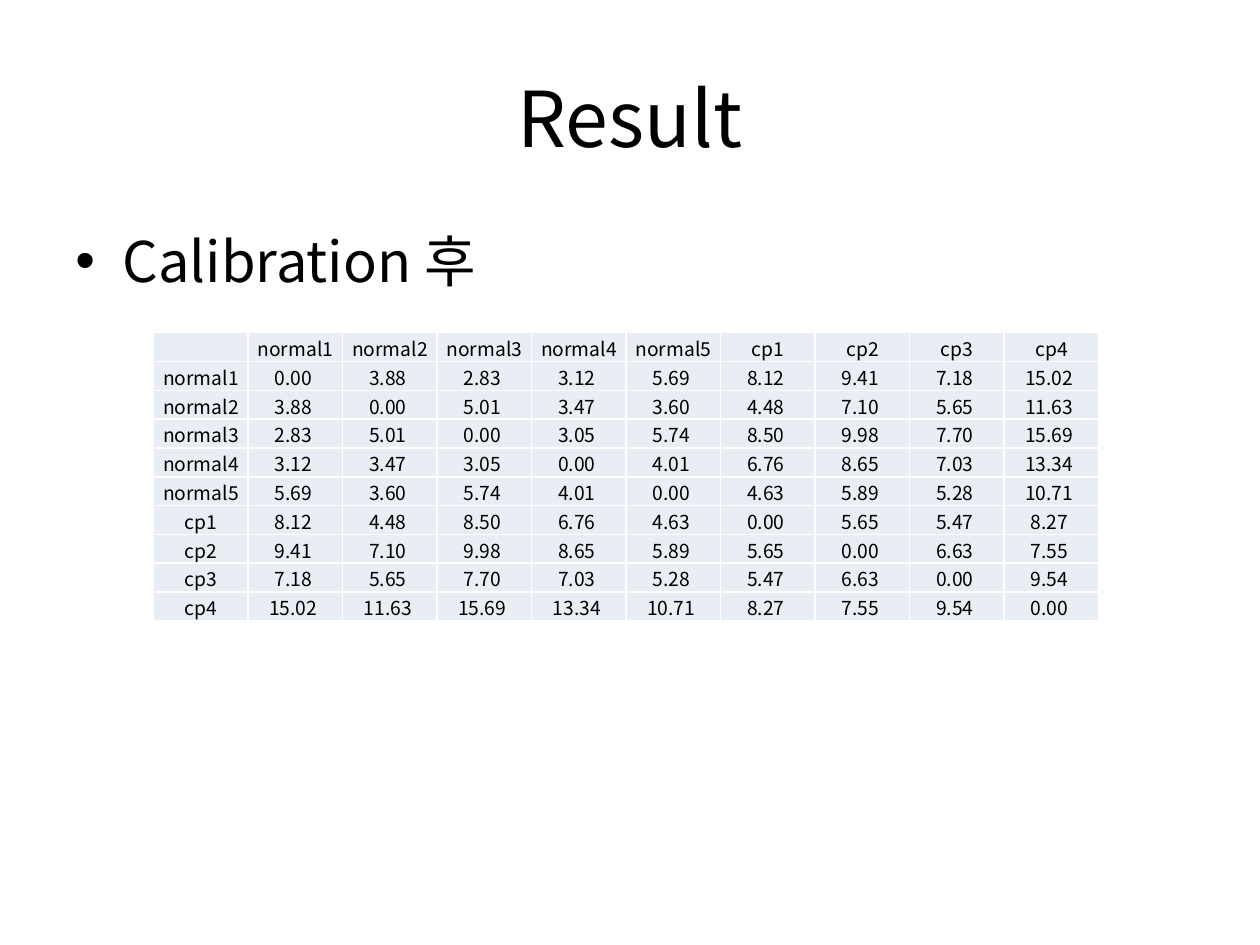
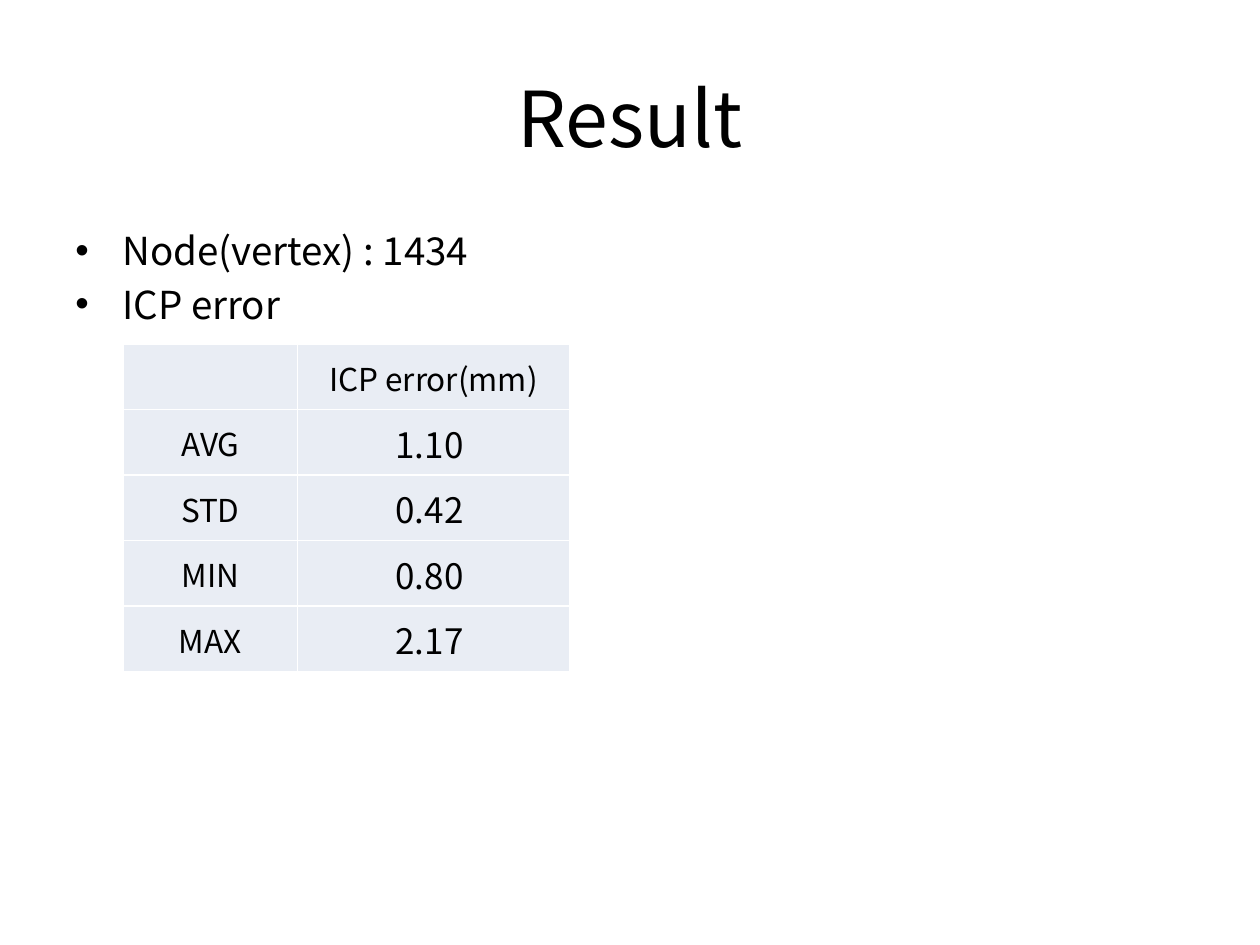
import dataclasses

import pptx
import pptx.dml.color
import pptx.enum.text
import pptx.oxml
import pptx.oxml.ns
import pptx.util

COLORS = {"text": "000000", "cell": "E9EDF4", "border": "FFFFFF"}
FONT = "Noto Sans CJK KR"
SLIDE_W, SLIDE_H = pptx.util.Inches(10), pptx.util.Inches(7.5)
COLUMN, ROW = SLIDE_W / 100, SLIDE_H / 100  # layout grid of 100 x 100
ALIGN = pptx.enum.text.PP_ALIGN
ANCHOR = pptx.enum.text.MSO_ANCHOR

SUBJECTS = [f"normal{n}" for n in range(1, 6)] + [f"cp{n}" for n in range(1, 5)]
# Distances from each subject to the ones after it; the matrix is symmetric
DISTANCES = [
    [3.88, 2.83, 3.12, 5.69, 8.12, 9.41, 7.18, 15.02],
    [5.01, 3.47, 3.60, 4.48, 7.10, 5.65, 11.63],
    [3.05, 5.74, 8.50, 9.98, 7.70, 15.69],
    [4.01, 6.76, 8.65, 7.03, 13.34],
    [4.63, 5.89, 5.28, 10.71],
    [5.65, 5.47, 8.27],
    [6.63, 7.55],
    [9.54],
]
ICP_ERRORS = {"AVG": 1.10, "STD": 0.42, "MIN": 0.80, "MAX": 2.17}


@dataclasses.dataclass
class Box:
    """A region in grid columns and rows."""
    left: float
    top: float
    width: float
    height: float

    def emu(self):
        return (round(self.left * COLUMN), round(self.top * ROW),
                round(self.width * COLUMN), round(self.height * ROW))


TITLE_BOX = Box(5, 4, 90, 16.67)
BODY_BOX = Box(5, 23.33, 90, 66)


def xml(tag, inner="", attributes=""):
    namespace = pptx.oxml.ns.nsdecls("a")
    return pptx.oxml.parse_xml(f"<a:{tag} {namespace} {attributes}>{inner}</a:{tag}>")


def style(paragraph, size, align):
    paragraph.alignment = align
    font = paragraph.font
    font.name, font.size = FONT, pptx.util.Pt(size)
    font.color.rgb = pptx.dml.color.RGBColor.from_string(COLORS["text"])
    defaults = paragraph._p.pPr.find(pptx.oxml.ns.qn("a:defRPr"))
    defaults.append(xml("ea", attributes=f'typeface="{FONT}"'))
    if not paragraph.runs:  # keeps an empty line as low as its neighbours
        paragraph._p.append(xml("endParaRPr", attributes=f'sz="{size * 100}"'))
    return defaults


def add_text_frame(slide, box):
    frame = slide.shapes.add_textbox(*box.emu()).text_frame
    frame.word_wrap = True
    return frame


# Title band
def add_title(slide, box, title):
    frame = add_text_frame(slide, box)
    frame.vertical_anchor = ANCHOR.MIDDLE
    frame.text = title
    style(frame.paragraphs[0], 44, ALIGN.CENTER)


# Bulleted body
def add_bullets(slide, box, points, size):
    frame = add_text_frame(slide, box)
    frame.text = "\n".join(points)
    indent = round(3.75 * COLUMN)
    for point in frame.paragraphs:
        defaults = style(point, size, ALIGN.LEFT)
        point.space_before = pptx.util.Pt(0.2 * size)
        properties = point._p.pPr
        properties.set("marL", str(indent))
        properties.set("indent", str(-indent))
        defaults.addprevious(xml("buFont", attributes='typeface="Arial"'))
        defaults.addprevious(xml("buChar", attributes='char="•"'))


# Table cells
def fill_cell(cell, value, label_size, value_size):
    is_label = isinstance(value, str)
    cell.text = value if is_label else f"{value:.2f} "
    style(cell.text_frame.paragraphs[0], label_size if is_label else value_size,
          ALIGN.CENTER)
    cell.vertical_anchor = ANCHOR.MIDDLE
    cell.margin_left = cell.margin_right = cell.margin_top = pptx.util.Inches(0.01)
    cell.margin_bottom = 0
    cell.fill.solid()
    cell.fill.fore_color.rgb = pptx.dml.color.RGBColor.from_string(COLORS["cell"])
    line = f'<a:solidFill><a:srgbClr val="{COLORS["border"]}"/></a:solidFill>'
    for position, edge in enumerate(("lnL", "lnR", "lnT", "lnB")):
        cell._tc.tcPr.insert(position, xml(edge, line, 'w="12700"'))


def add_grid(slide, box, rows, column_shares, label_size, value_size):
    left, top, width, height = box.emu()
    table = slide.shapes.add_table(
        len(rows), len(column_shares), left, top, width, height).table
    table.first_row = table.horz_banding = False
    for column, share in zip(table.columns, column_shares):
        column.width = round(width * share)
    for row, values in zip(table.rows, rows):
        row.height = round(height / len(rows))
        for cell, value in zip(row.cells, values):
            fill_cell(cell, value, label_size, value_size)


def distance(first, second):
    low, high = sorted((first, second))
    return 0.0 if low == high else DISTANCES[low][high - low - 1]


def add_result_slide(deck, points, point_size):
    slide = deck.slides.add_slide(deck.slide_layouts[6])
    add_title(slide, TITLE_BOX, "Result")
    add_bullets(slide, BODY_BOX, points, point_size)
    return slide


# Slide 1: distances between subjects
def add_calibration_slide(deck):
    slide = add_result_slide(deck, ["Calibration 후"], 32)
    count = len(SUBJECTS)
    rows = [["", *SUBJECTS]] + [
        [subject, *(distance(i, j) for j in range(count))]
        for i, subject in enumerate(SUBJECTS)]
    add_grid(slide, Box(12.2, 35.2, 75, 30.5), rows,
             [1 / (count + 1)] * (count + 1), 11, 11)


# Slide 2: ICP error summary
def add_icp_slide(deck):
    slide = add_result_slide(deck, ["Node(vertex) : 1434", "ICP error"], 22)
    rows = [["", "ICP error(mm)"], *ICP_ERRORS.items()]
    add_grid(slide, Box(9.8, 36.4, 35.4, 34.67), rows, [0.39, 0.61], 18, 20)


def main():
    deck = pptx.Presentation()
    deck.slide_width, deck.slide_height = SLIDE_W, SLIDE_H
    add_calibration_slide(deck)
    add_icp_slide(deck)
    deck.save("out.pptx")


if __name__ == "__main__":
    main()
